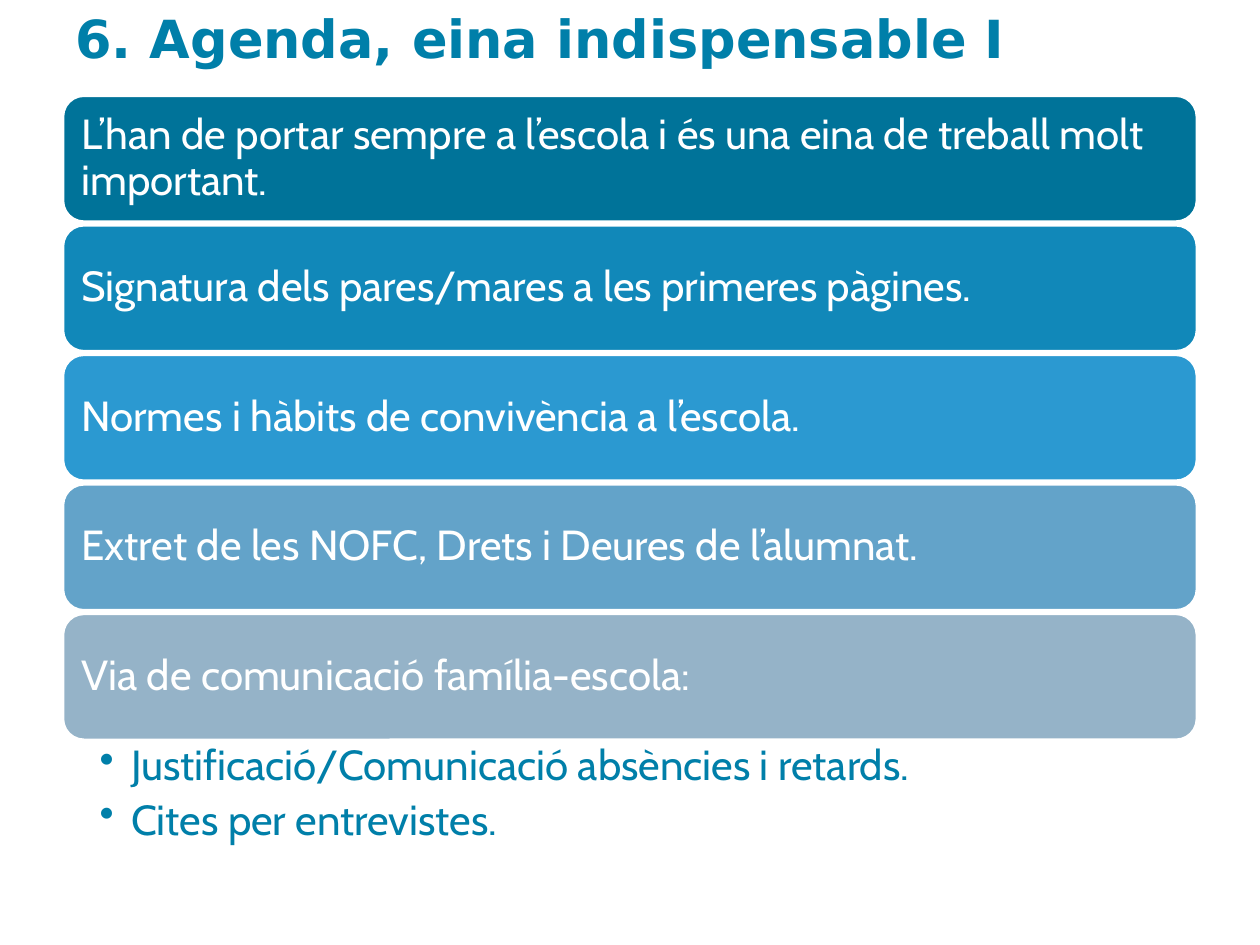
from pptx import Presentation
from pptx.dml.color import RGBColor
from pptx.enum.shapes import MSO_SHAPE as Shape
from pptx.enum.text import MSO_ANCHOR as Anchor, PP_ALIGN as Align
from pptx.oxml import parse_xml
from pptx.oxml.ns import nsdecls
from pptx.util import Inches, Pt

COLUMNS, ROWS = 20, 75
BAR_TOP, BAR_HEIGHT, BAR_STEP = 7.6, 10, 10.28

BARS = [
    ("L’han de portar sempre a l’escola i és una eina de treball molt important.", "007399"),
    ("Signatura dels pares/mares a les primeres pàgines.", "1188B9"),
    ("Normes i hàbits de convivència a l’escola.", "2B99D1"),
    ("Extret de les NOFC, Drets i Deures de l’alumnat.", "63A3C9"),
    ("Via de comunicació família-escola:", "95B3C8"),
]
CHANNELS = ["Justificació/Comunicació absències i retards.", "Cites per entrevistes."]


def color(value):
    return RGBColor.from_string(value)


def add_bullet(para, indent):
    props = para._p.get_or_add_pPr()
    props.set("marL", str(Inches(indent)))
    props.set("indent", str(-Inches(indent)))
    props.append(parse_xml(f'<a:buChar {nsdecls("a")} char="•"/>'))


def write(box, *lines, font, size, ink, bold=False, anchor=Anchor.TOP,
          insets=(0.1, 0.05, 0.1, 0.05), spacing=1, after=0, bullet=0):
    """Fill a box with one paragraph per line; insets in inches."""
    frame = box.text_frame
    frame.word_wrap = True
    frame.vertical_anchor = anchor
    (frame.margin_left, frame.margin_top,
     frame.margin_right, frame.margin_bottom) = map(Inches, insets)
    for index, line in enumerate(lines):
        para = frame.add_paragraph() if index else frame.paragraphs[0]
        if bullet:
            add_bullet(para, bullet)
        para.alignment = Align.LEFT
        para.line_spacing = spacing
        para.space_after = Pt(after)
        span = para.add_run()
        span.text = line
        span.font.name = font
        span.font.size = Pt(size)
        span.font.bold = bold
        span.font.color.rgb = color(ink)


class Page:
    """Style and current slide; places are given in grid columns and rows."""
    accent, paper = "007FA9", "FFFFFF"
    heading_font, body_font = "DejaVu Sans", "Cabin"
    body_size = 24

    def __init__(self, deck):
        self.slide = deck.slides.add_slide(deck.slide_layouts[6])
        self.column = deck.slide_width / COLUMNS
        self.row = deck.slide_height / ROWS

    def place(self, left, top, width, height):
        return (round(left * self.column), round(top * self.row),
                round(width * self.column), round(height * self.row))

    def title(self, text, *area):
        box = self.slide.shapes.add_textbox(*self.place(*area))
        write(box, text, font=self.heading_font, size=30, ink=self.accent,
              bold=True, anchor=Anchor.BOTTOM)

    def bar(self, text, fill, *area):
        bar = self.slide.shapes.add_shape(Shape.ROUNDED_RECTANGLE, *self.place(*area))
        bar.shadow.inherit = False
        bar.fill.solid()
        bar.fill.fore_color.rgb = color(fill)
        bar.line.color.rgb = color(self.paper)
        bar.line.width = Pt(1.5)
        write(bar, text, font=self.body_font, size=self.body_size, ink=self.paper,
              anchor=Anchor.MIDDLE, insets=(0.1, 0.1, 0.1, 0.1), spacing=0.9, after=8)

    def bullets(self, lines, *area):
        box = self.slide.shapes.add_textbox(*self.place(*area))
        write(box, *lines, font=self.body_font, size=self.body_size, ink=self.accent,
              insets=(0.29, 0.03, 0.19, 0.03), spacing=0.9, after=5, bullet=0.25)


def main():
    deck = Presentation()
    deck.slide_width, deck.slide_height = Inches(10), Inches(7.5)
    page = Page(deck)

    # Heading
    page.title("6. Agenda, eina indispensable I", 1, 0.9, 18, 5.1)

    # Stack of coloured bars
    for index, (text, fill) in enumerate(BARS):
        page.bar(text, fill, 1, BAR_TOP + index * BAR_STEP, 18, BAR_HEIGHT)

    # Details of the last bar
    page.bullets(CHANNELS, 1, BAR_TOP + len(BARS) * BAR_STEP - 0.2, 18, 8.5)

    deck.save("out.pptx")


if __name__ == "__main__":
    main()
